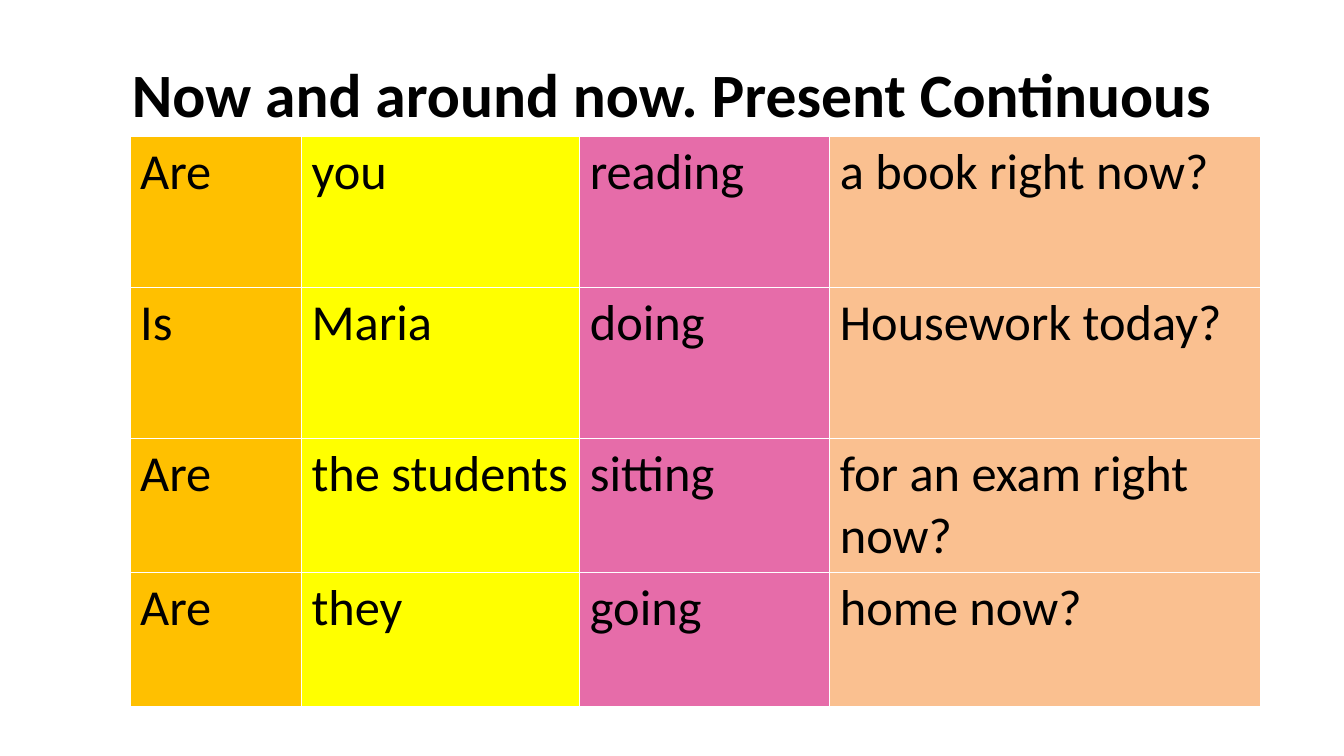
"""Build a slide with a colour-coded table of Present Continuous questions."""
from dataclasses import dataclass

from lxml import etree
from pptx import Presentation
from pptx.dml.color import RGBColor
from pptx.enum.text import MSO_ANCHOR, PP_ALIGN
from pptx.oxml.ns import qn
from pptx.util import Cm, Pt

LEFT, CENTER = PP_ALIGN.LEFT, PP_ALIGN.CENTER
TOP, MIDDLE = MSO_ANCHOR.TOP, MSO_ANCHOR.MIDDLE

TITLE = "Now and around now. Present Continuous"
QUESTIONS = [
    ("Are", "you", "reading", "a book right now?"),
    ("Is", "Maria", "doing", "Housework today?"),
    ("Are", "the students", "sitting", "for an exam right now?"),
    ("Are", "they", "going", "home now?"),
]
SLIDE_SIZE = (33.87, 19.05)
TITLE_BOX = (1.7, 0.76, 30.48, 3.18)
TABLE_ORIGIN = (3.28, 3.43)
COLUMN_WIDTHS = (4.32, 7.01, 6.3, 10.85)
ROW_HEIGHTS = (3.81, 3.81, 3.38, 3.38)


@dataclass(frozen=True)
class Theme:
    font: str = "Calibri"
    text: str = "000000"
    border: str = "FFFFFF"
    columns: tuple = ("FFC000", "FFFF00", "E66CA9", "FAC090")
    title_size: int = 44
    cell_size: int = 36
    border_width: int = 1


THEME = Theme()


def write_text(frame, text, *, size, bold=False, align=LEFT, anchor=TOP):
    frame.word_wrap = True
    frame.vertical_anchor = anchor
    paragraph = frame.paragraphs[0]
    paragraph.alignment = align
    run = paragraph.add_run()
    run.text = text
    run.font.name = THEME.font
    run.font.size = Pt(size)
    run.font.bold = bold
    run.font.color.rgb = RGBColor.from_string(THEME.text)


def set_borders(cell):
    properties = cell._tc.get_or_add_tcPr()
    for position, side in enumerate(("lnL", "lnR", "lnT", "lnB")):
        line = etree.Element(qn(f"a:{side}"), w=str(Pt(THEME.border_width)))
        fill = etree.SubElement(line, qn("a:solidFill"))
        etree.SubElement(fill, qn("a:srgbClr"), val=THEME.border)
        properties.insert(position, line)


def add_title(slide):
    box = slide.shapes.add_textbox(*map(Cm, TITLE_BOX))
    write_text(box.text_frame, TITLE, size=THEME.title_size, bold=True,
               align=CENTER, anchor=MIDDLE)


def add_questions(slide):
    table = slide.shapes.add_table(
        len(QUESTIONS), len(COLUMN_WIDTHS), *map(Cm, TABLE_ORIGIN),
        Cm(sum(COLUMN_WIDTHS)), Cm(sum(ROW_HEIGHTS))).table
    table.first_row = False
    table.horz_banding = False
    for column, width in zip(table.columns, COLUMN_WIDTHS):
        column.width = Cm(width)
    for row, height, words in zip(table.rows, ROW_HEIGHTS, QUESTIONS):
        row.height = Cm(height)
        for cell, word, color in zip(row.cells, words, THEME.columns):
            cell.fill.solid()
            cell.fill.fore_color.rgb = RGBColor.from_string(color)
            write_text(cell.text_frame, word, size=THEME.cell_size)
            set_borders(cell)


def main():
    presentation = Presentation()
    presentation.slide_width, presentation.slide_height = map(Cm, SLIDE_SIZE)
    slide = presentation.slides.add_slide(presentation.slide_layouts[6])
    add_title(slide)
    add_questions(slide)
    presentation.save("out.pptx")


if __name__ == "__main__":
    main()
